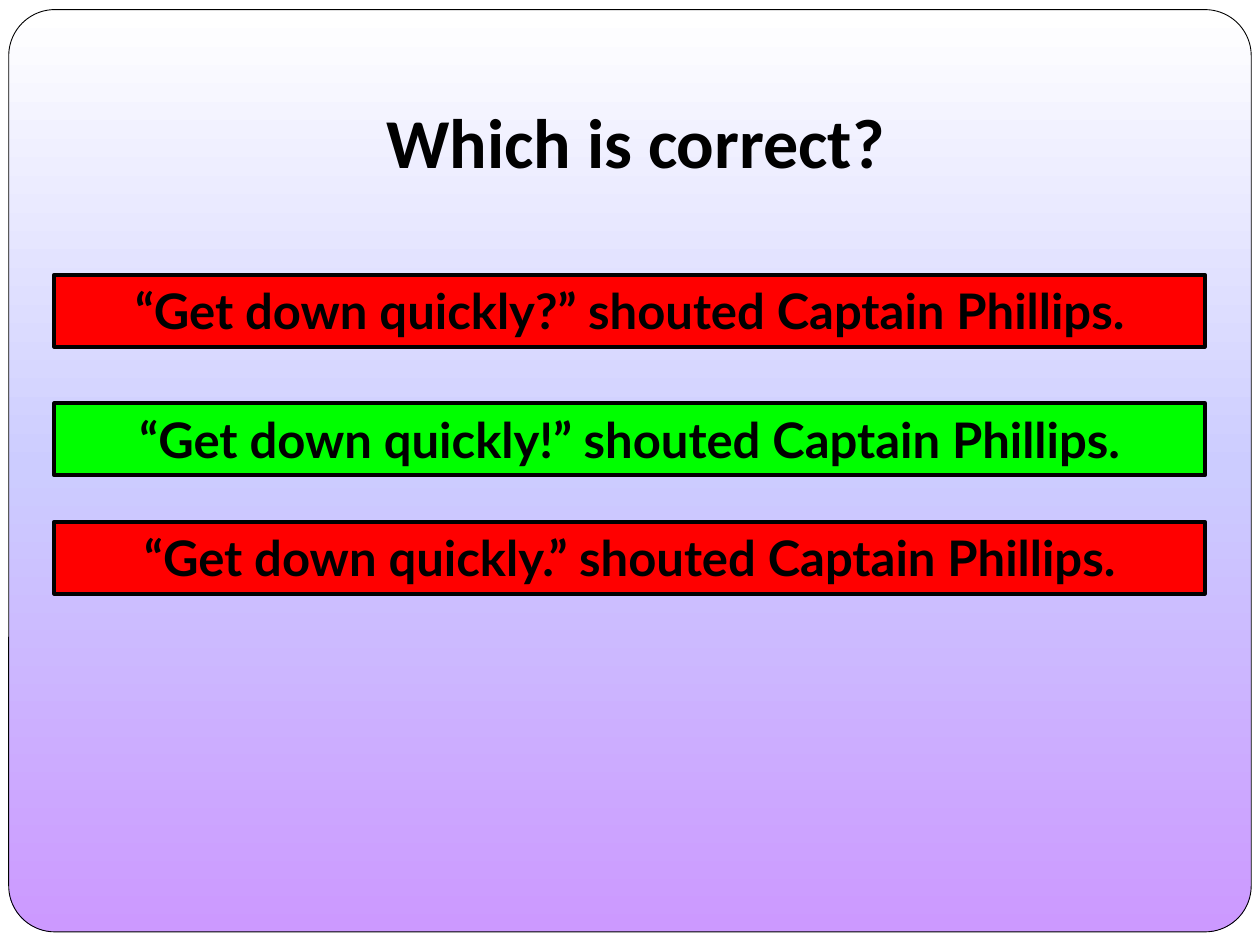
from copy import deepcopy

from pptx import Presentation
from pptx.dml.color import RGBColor
from pptx.enum import shapes, text
from pptx.util import Pt

TITLE = "Which is correct?"
ANSWERS = [
    (157, "“Get down quickly?” shouted Captain Phillips.", False),
    (230.4, "“Get down quickly!” shouted Captain Phillips.", True),
    (298.1, "“Get down quickly.” shouted Captain Phillips.", False),
]
GRADIENT = [(0, "FFFFFF"), (0.5, "CCCCFF"), (1, "CC99FF")]
RIGHT, WRONG = "00FF00", "FF0000"
BLACK, WHITE = "000000", "FFFFFF"
WIDTH, HEIGHT = 720, 540
BAR_LEFT, BAR_WIDTH, BAR_HEIGHT = 31, 657.5, 41.2


def rgb(value):
    return RGBColor.from_string(value)


def set_gradient(fill, element):
    fill.gradient()
    fill.gradient_angle = 270
    stop_list = element.xpath(".//a:gsLst")[0]
    stop_list.append(deepcopy(stop_list[0]))
    for stop, (position, color) in zip(fill.gradient_stops, GRADIENT):
        stop.position = position
        stop.color.rgb = rgb(color)


def add_box(s, kind, left, top, width, height, fill=None, line=None):
    sp = s.shapes.add_shape(kind, Pt(left), Pt(top), Pt(width), Pt(height))
    sp.shadow.inherit = False
    if fill:
        sp.fill.solid()
        sp.fill.fore_color.rgb = rgb(fill)
    else:
        set_gradient(sp.fill, sp.element)
    if line:
        sp.line.color.rgb = rgb(BLACK)
        sp.line.width = Pt(line)
    else:
        sp.line.fill.background()
    return sp


def set_text(tf, content, size, font, anchor):
    tf.text = content
    tf.word_wrap = True
    tf.vertical_anchor = anchor
    p = tf.paragraphs[0]
    p.alignment = text.PP_ALIGN.CENTER
    r = p.runs[0]
    r.font.size = Pt(size)
    r.font.name = font
    r.font.bold = True
    r.font.color.rgb = rgb(BLACK)


def main():
    prs = Presentation()
    prs.slide_width, prs.slide_height = Pt(WIDTH), Pt(HEIGHT)
    s = prs.slides.add_slide(prs.slide_layouts[6])
    set_gradient(s.background.fill, s.element)

    rect = shapes.MSO_SHAPE.RECTANGLE
    add_box(s, rect, 0, 0, WIDTH, HEIGHT, WHITE)
    panel = add_box(s, shapes.MSO_SHAPE.ROUNDED_RECTANGLE, 5, 5.5, 710, 527, line=0.5)
    panel.adjustments[0] = 0.05

    title = s.shapes.add_textbox(Pt(42.5), Pt(21.6), Pt(641.5), Pt(90))
    title.text_frame.margin_bottom = Pt(7.2)
    set_text(title.text_frame, TITLE, 40, "Calibri", text.MSO_ANCHOR.BOTTOM)

    for top, answer, correct in ANSWERS:
        color = RIGHT if correct else WRONG
        bar = add_box(s, rect, BAR_LEFT, top, BAR_WIDTH, BAR_HEIGHT, color, 2.25)
        set_text(bar.text_frame, answer, 28, "Lato", text.MSO_ANCHOR.TOP)
        bar.text_frame.auto_size = text.MSO_AUTO_SIZE.SHAPE_TO_FIT_TEXT

    prs.save("out.pptx")


if __name__ == "__main__":
    main()
